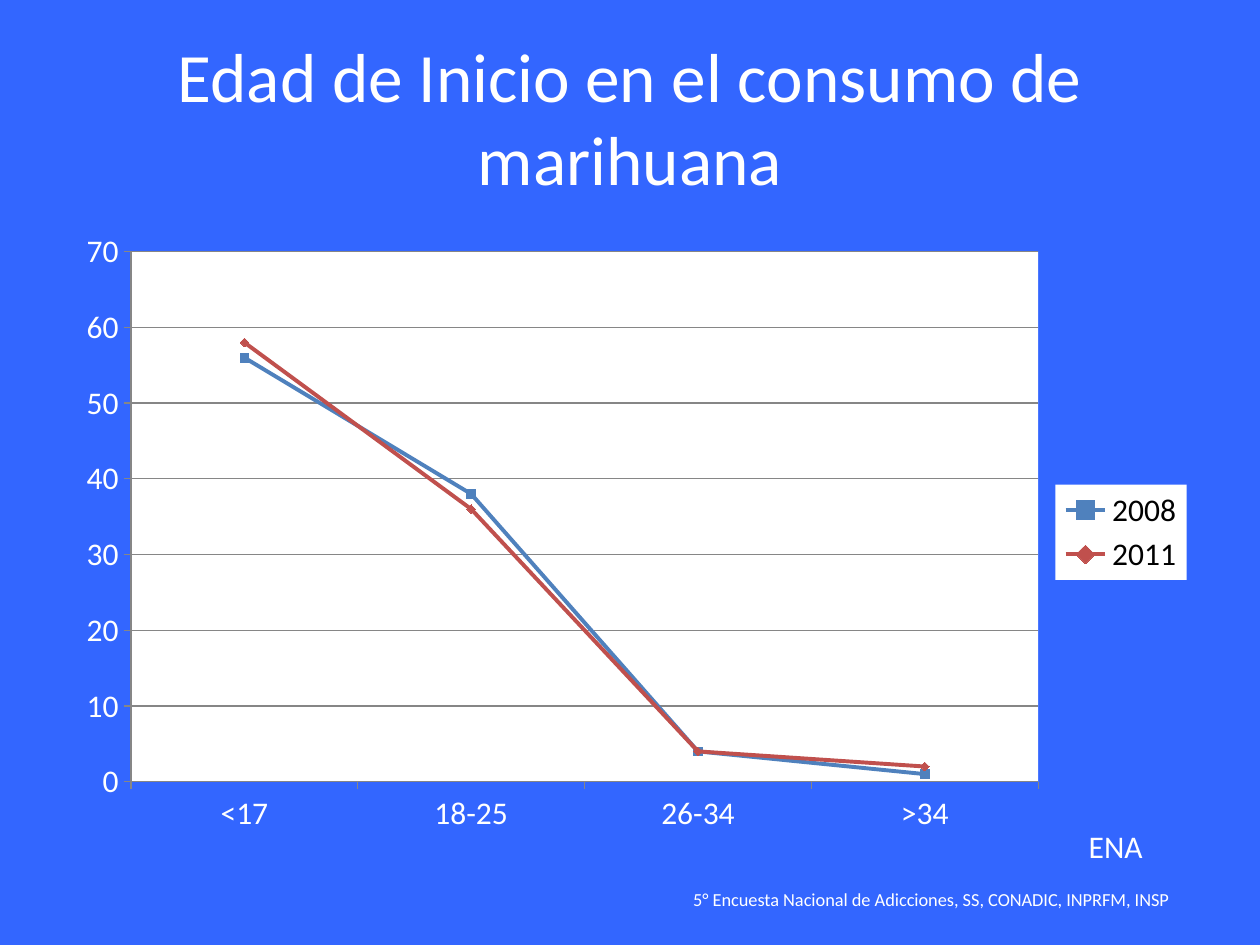
from dataclasses import dataclass

from lxml.etree import SubElement
from pptx import Presentation
from pptx.chart.data import CategoryChartData
from pptx.dml.color import RGBColor
from pptx.enum.chart import (XL_CHART_TYPE, XL_LEGEND_POSITION,
                             XL_MARKER_STYLE, XL_TICK_MARK)
from pptx.enum.text import MSO_ANCHOR, MSO_AUTO_SIZE, PP_ALIGN
from pptx.oxml import parse_xml
from pptx.oxml.ns import qn
from pptx.util import Pt


@dataclass(frozen=True)
class Theme:
    font: str = "Calibri"
    back: str = "3366FF"
    light: str = "FFFFFF"
    dark: str = "000000"
    grid: str = "868686"
    title: float = 39.6
    body: float = 18
    note: float = 10.5


THEME = Theme()
AGES = ["<17", "18-25", "26-34", ">34"]
YEARS = [
    ("2008", [56, 38, 4, 1], "4F81BD", XL_MARKER_STYLE.SQUARE),
    ("2011", [58, 36, 4, 2], "C0504D", XL_MARKER_STYLE.DIAMOND),
]
PLOT = {"x": 0.06, "y": 0.05, "w": 0.8, "h": 0.85}


def color(code):
    return RGBColor.from_string(code)


def style(font, size, code):
    font.name = THEME.font
    font.size = Pt(size)
    font.color.rgb = color(code)


def write(shape, text, size=THEME.body, align=PP_ALIGN.LEFT,
          anchor=MSO_ANCHOR.TOP, fit=MSO_AUTO_SIZE.NONE):
    frame = shape.text_frame
    frame.word_wrap = True
    frame.auto_size = fit
    frame.vertical_anchor = anchor
    para = frame.paragraphs[0]
    para.alignment = align
    run = para.add_run()
    run.text = text
    style(run.font, size, THEME.light)


def add_title(slide, text, left, top, width, height):
    title = slide.shapes.title
    title.left, title.top = Pt(left), Pt(top)
    title.width, title.height = Pt(width), Pt(height)
    write(title, text, size=THEME.title, align=PP_ALIGN.CENTER,
          anchor=MSO_ANCHOR.MIDDLE)


def add_text(slide, text, left, top, width, height, **kind):
    box = slide.shapes.add_textbox(Pt(left), Pt(top), Pt(width), Pt(height))
    write(box, text, fit=MSO_AUTO_SIZE.SHAPE_TO_FIT_TEXT, **kind)


def white_fill():
    return parse_xml(
        '<c:spPr xmlns:c="http://schemas.openxmlformats.org/drawingml/2006/chart"'
        ' xmlns:a="http://schemas.openxmlformats.org/drawingml/2006/main">'
        f'<a:solidFill><a:srgbClr val="{THEME.light}"/></a:solidFill>'
        '<a:ln><a:noFill/></a:ln></c:spPr>')


def set_plot(chart):
    area = chart._chartSpace.chart.plotArea
    for old in area.findall(qn("c:layout")):
        area.remove(old)
    layout = area.makeelement(qn("c:layout"))
    area.insert(0, layout)
    manual = SubElement(layout, qn("c:manualLayout"))
    SubElement(manual, qn("c:layoutTarget")).set("val", "inner")
    for name in "xy":
        SubElement(manual, qn(f"c:{name}Mode")).set("val", "edge")
    for name, value in PLOT.items():
        SubElement(manual, qn(f"c:{name}")).set("val", str(value))
    area.append(white_fill())


def set_axes(chart):
    for axis in (chart.category_axis, chart.value_axis):
        style(axis.tick_labels.font, THEME.body, THEME.light)
        axis.major_tick_mark = XL_TICK_MARK.OUTSIDE
        axis.minor_tick_mark = XL_TICK_MARK.NONE
        axis.format.line.color.rgb = color(THEME.grid)
    axis = chart.value_axis
    axis.minimum_scale, axis.maximum_scale, axis.major_unit = 0, 70, 10
    axis.has_major_gridlines = True
    axis.major_gridlines.format.line.color.rgb = color(THEME.grid)


def set_key(chart):
    chart.has_legend = True
    key = chart.legend
    key.position = XL_LEGEND_POSITION.RIGHT
    key.include_in_layout = False
    style(key.font, THEME.body, THEME.dark)
    key._element.find(qn("c:overlay")).addnext(white_fill())


def add_lines(slide, left, top, width, height):
    data = CategoryChartData()
    data.categories = AGES
    for name, values, *_ in YEARS:
        data.add_series(name, values)
    chart = slide.shapes.add_chart(
        XL_CHART_TYPE.LINE_MARKERS, Pt(left), Pt(top), Pt(width), Pt(height),
        data).chart
    chart.has_title = False
    style(chart.font, THEME.body, THEME.dark)
    chart.plots[0].vary_by_categories = False
    for line, (_, _, code, mark) in zip(chart.plots[0].series, YEARS):
        line.smooth = False
        line.format.line.width = Pt(2.25)
        line.format.line.color.rgb = color(code)
        line.marker.style = mark
        line.marker.size = 5
        for part in (line.marker.format.fill, line.marker.format.line.fill):
            part.solid()
            part.fore_color.rgb = color(code)
    set_axes(chart)
    set_key(chart)
    set_plot(chart)


def main():
    deck = Presentation()
    deck.slide_width, deck.slide_height = Pt(720), Pt(540)
    slide = deck.slides.add_slide(deck.slide_layouts[5])
    slide.background.fill.solid()
    slide.background.fill.fore_color.rgb = color(THEME.back)
    add_title(slide, "Edad de Inicio en el consumo de marihuana",
              36, 21.6, 648, 90)
    add_lines(slide, 36, 126, 648, 356.4)
    add_text(slide, "ENA", 615, 468.8, 85, 29)
    add_text(slide,
             "5° Encuesta Nacional de Adicciones, SS, CONADIC, INPRFM, INSP",
             332, 503.3, 343.4, 20.9, size=THEME.note, align=PP_ALIGN.RIGHT,
             anchor=MSO_ANCHOR.MIDDLE)
    deck.save("out.pptx")


if __name__ == "__main__":
    main()
